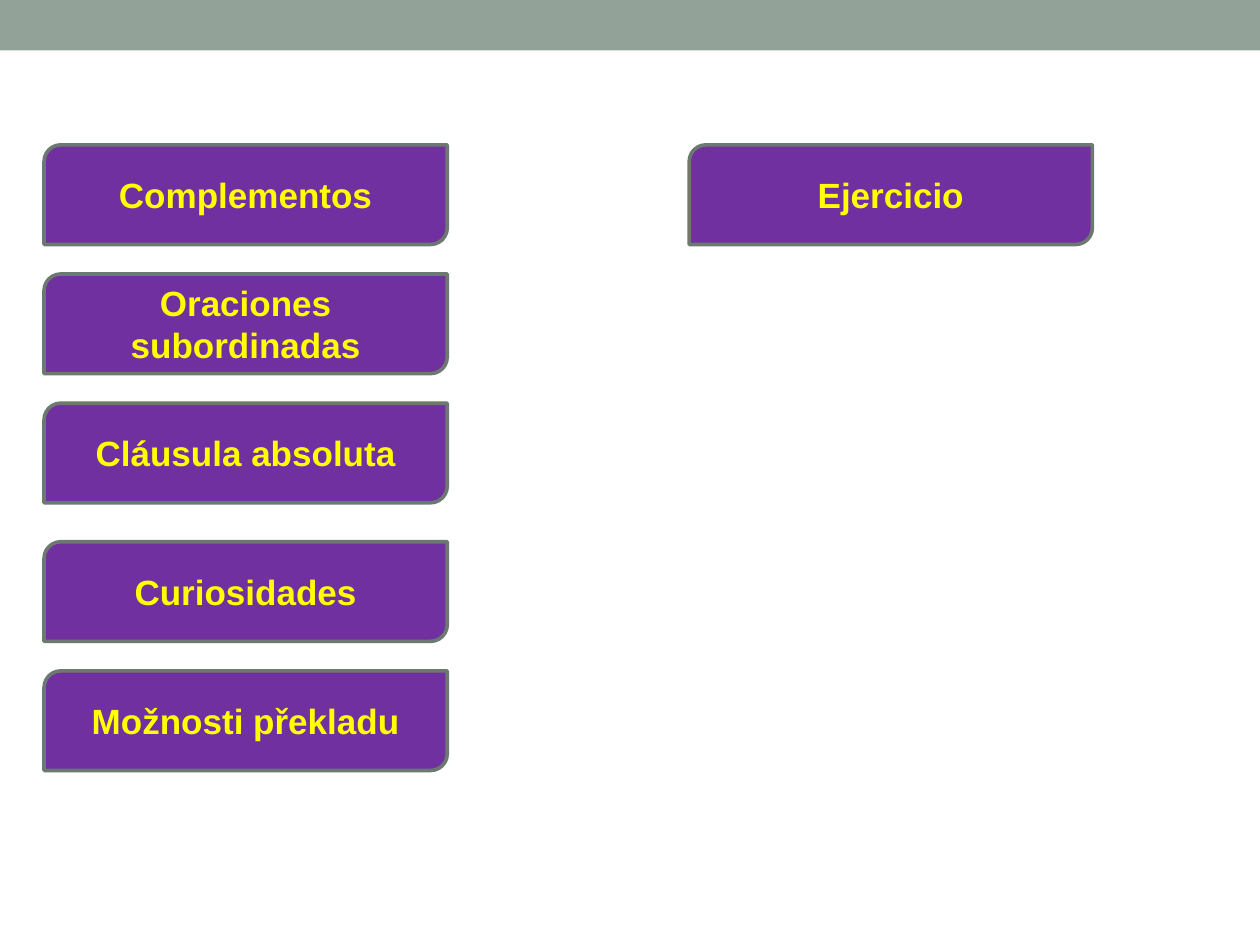
from pptx import Presentation
from pptx.dml.color import RGBColor
from pptx.enum.shapes import MSO_SHAPE
from pptx.enum.text import MSO_ANCHOR, PP_ALIGN
from pptx.util import Inches, Pt

SAGE = RGBColor(0x93, 0xA2, 0x99)
GREY = RGBColor(0x6D, 0x78, 0x71)
PURPLE = RGBColor(0x70, 0x30, 0xA0)
YELLOW = RGBColor(0xFF, 0xFF, 0x00)

STEP = 1.025
LEFT, RIGHT = 0.35, 5.47
GROUPS = [
    (LEFT, 1.15, ["Complementos", "Oraciones subordinadas", "Cláusula absoluta"]),
    (LEFT, 4.3, ["Curiosidades", "Možnosti překladu"]),
    (RIGHT, 1.15, ["Ejercicio"]),
]


class Menu:
    """Draws the band and menu buttons on one slide in a shared style."""

    font = {"name": "Arial", "size": Pt(20), "bold": True}
    size = (3.2, 0.79)

    def __init__(self, slide):
        self.slide = slide

    def shape(self, kind, box, fill):
        item = self.slide.shapes.add_shape(kind, *map(Inches, box))
        item.shadow.inherit = False
        item.fill.solid()
        item.fill.fore_color.rgb = fill
        return item

    def band(self, width, height):
        self.shape(MSO_SHAPE.RECTANGLE, (0, 0, width, height), SAGE).line.fill.background()

    def button(self, left, top, text):
        item = self.shape(MSO_SHAPE.ROUND_2_DIAG_RECTANGLE, (left, top, *self.size), PURPLE)
        item.line.color.rgb = GREY
        item.line.width = Pt(2.08)
        frame = item.text_frame
        frame.word_wrap = True
        frame.vertical_anchor = MSO_ANCHOR.MIDDLE
        para = frame.paragraphs[0]
        para.alignment = PP_ALIGN.CENTER
        run = para.add_run()
        run.text = text
        for key, value in self.font.items():
            setattr(run.font, key, value)
        run.font.color.rgb = YELLOW


def main():
    deck = Presentation()
    deck.slide_width, deck.slide_height = Inches(10), Inches(7.5)
    menu = Menu(deck.slides.add_slide(deck.slide_layouts[6]))
    menu.band(10, 0.4)
    for left, top, names in GROUPS:
        for row, name in enumerate(names):
            menu.button(left, top + row * STEP, name)
    deck.save("out.pptx")


if __name__ == "__main__":
    main()
